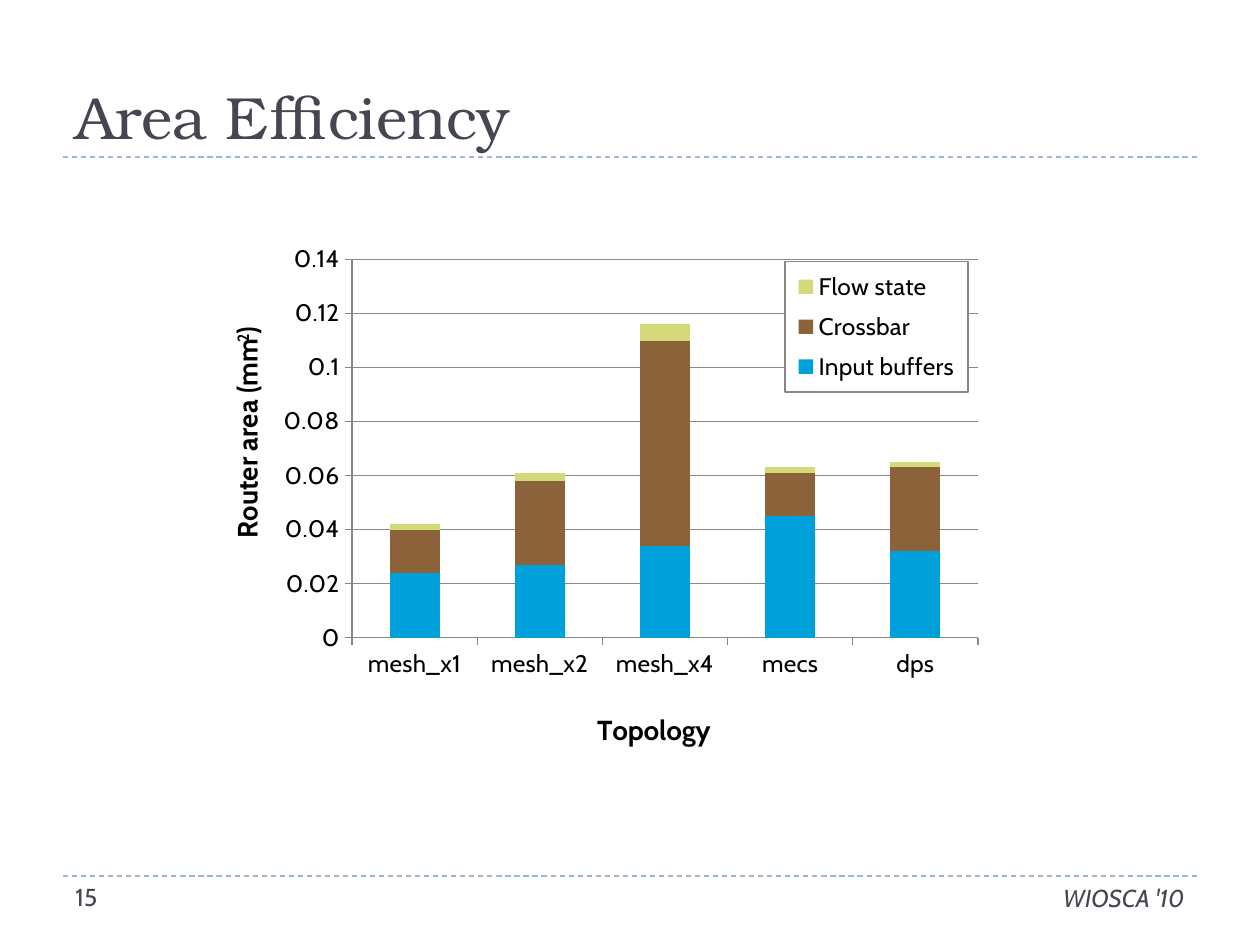
from dataclasses import dataclass

from lxml import etree
from pptx import Presentation
from pptx.chart.data import CategoryChartData
from pptx.dml.color import RGBColor
from pptx.enum.chart import XL_CHART_TYPE as ChartType, XL_LEGEND_POSITION as LegendPosition
from pptx.enum.chart import XL_TICK_MARK as TickMark
from pptx.enum.dml import MSO_LINE as Dash
from pptx.enum.shapes import MSO_CONNECTOR as Connector
from pptx.enum.text import MSO_ANCHOR as Anchor, PP_ALIGN as Align
from pptx.oxml import parse_xml
from pptx.oxml.ns import nsdecls, qn
from pptx.util import Emu, Pt

EMU_PER_PX = 914400 / 126
COLORS = {
    "ink": "464653", "rule": "9FB8CD", "black": "000000", "white": "FFFFFF", "grid": "868686",
    "buffers": "00A1DA", "crossbar": "8B6239", "flow": "D2DA7A",
}
HEADING_FONT, BODY_FONT = "TeX Gyre Bonum", "Cabin"


@dataclass(frozen=True)
class Box:
    left: int
    top: int
    width: int
    height: int

    def emu(self) -> list[Emu]:
        return [px(n) for n in (self.left, self.top, self.width, self.height)]


@dataclass(frozen=True)
class Component:
    name: str
    areas: tuple[float, ...]
    color: str


CHART = Box(200, 241, 798, 514)
PLOT = Box(352, 260, 626, 386)
LEGEND = Box(785, 262, 183, 133)
TOPOLOGY_TITLE = Box(592, 716, 113, 30)
AREA_TITLE = Box(225, 325, 26, 212)
RULES = (157, 876)

TOPOLOGIES = ("mesh_x1", "mesh_x2", "mesh_x4", "mecs", "dps")
COMPONENTS = (
    Component("Input buffers", (0.024, 0.027, 0.034, 0.045, 0.032), "buffers"),
    Component("Crossbar", (0.016, 0.031, 0.076, 0.016, 0.031), "crossbar"),
    Component("Flow state", (0.002, 0.003, 0.006, 0.002, 0.002), "flow"),
)


def px(length: int) -> Emu:
    return Emu(round(length * EMU_PER_PX))


def rgb(color: str) -> RGBColor:
    return RGBColor.from_string(COLORS[color])


def style_font(font, size: float, color="black", face=BODY_FONT, bold=False, italic=False) -> None:
    font.size, font.name = Pt(size), face
    font.bold, font.italic = bold, italic
    font.color.rgb = rgb(color)


def add_text(slide, text: str, box: Box, *, size: float, face=BODY_FONT, italic=False,
             align=Align.LEFT, anchor=Anchor.TOP) -> None:
    frame = slide.shapes.add_textbox(*box.emu()).text_frame
    frame.word_wrap, frame.vertical_anchor = True, anchor
    paragraph = frame.paragraphs[0]
    paragraph.alignment = align
    run = paragraph.add_run()
    run.text = text
    style_font(run.font, size, "ink", face, italic=italic)


def add_rule(slide, y: int) -> None:
    rule = slide.shapes.add_connector(Connector.STRAIGHT, px(63), px(y), px(1197), px(y))
    rule.line.color.rgb, rule.line.width = rgb("rule"), Pt(0.75)
    rule.line.dash_style = Dash.DASH
    etree.SubElement(rule._element.spPr, qn("a:effectLst"))


def place_in_chart(parent, before: str, box: Box, sized=True, inner=False) -> None:
    for old in parent.findall(qn("c:layout")):
        parent.remove(old)
    layout = etree.Element(qn("c:layout"))
    manual = etree.SubElement(layout, qn("c:manualLayout"))
    settings = [("layoutTarget", "inner")] if inner else []
    settings += [("xMode", "edge"), ("yMode", "edge"),
                 ("x", (box.left - CHART.left) / CHART.width),
                 ("y", (box.top - CHART.top) / CHART.height)]
    if sized:
        settings += [("w", box.width / CHART.width), ("h", box.height / CHART.height)]
    for tag, setting in settings:
        etree.SubElement(manual, qn(f"c:{tag}")).set("val", str(setting))
    parent.find(qn(before)).addprevious(layout)


def style_axis(axis, title: str, box: Box, superscript="", rotation=0) -> None:
    style_font(axis.tick_labels.font, 14)
    axis.major_tick_mark, axis.minor_tick_mark = TickMark.OUTSIDE, TickMark.NONE
    axis.format.line.color.rgb = rgb("grid")
    frame = axis.axis_title.text_frame
    frame._txBody.bodyPr.set("rot", str(rotation * 60000))
    pieces = [(title, 0), (superscript, 30000), (")", 0)] if superscript else [(title, 0)]
    for text, baseline in pieces:
        run = frame.paragraphs[0].add_run()
        run.text = text
        style_font(run.font, 16, bold=True)
        if baseline:
            run.font._element.set("baseline", str(baseline))
    place_in_chart(axis.axis_title._element, "c:overlay", box, sized=False)


def add_legend(chart) -> None:
    chart.has_legend = True
    legend = chart.legend
    legend.position, legend.include_in_layout = LegendPosition.RIGHT, False
    style_font(legend.font, 14)
    place_in_chart(legend._element, "c:overlay", LEGEND)
    legend._element.find(qn("c:overlay")).addnext(parse_xml(
        f'<c:spPr {nsdecls("c", "a")}>'
        f'<a:solidFill><a:srgbClr val="{COLORS["white"]}"/></a:solidFill>'
        f'<a:ln w="9525"><a:solidFill><a:srgbClr val="{COLORS["grid"]}"/></a:solidFill></a:ln>'
        '</c:spPr>'))


def add_area_chart(slide) -> None:
    router_areas = CategoryChartData()
    router_areas.categories = TOPOLOGIES
    for component in COMPONENTS:
        router_areas.add_series(component.name, component.areas)
    chart = slide.shapes.add_chart(ChartType.COLUMN_STACKED, *CHART.emu(), router_areas).chart
    style_font(chart.font, 10)
    chart.has_title = False
    bars = chart.plots[0]
    bars.gap_width, bars.overlap, bars.vary_by_categories = 150, 100, False
    for series, component in zip(bars.series, COMPONENTS):
        series.format.fill.solid()
        series.format.fill.fore_color.rgb = rgb(component.color)
    area_axis = chart.value_axis
    area_axis.minimum_scale, area_axis.maximum_scale, area_axis.major_unit = 0, 0.14, 0.02
    area_axis.has_major_gridlines = True
    area_axis.major_gridlines.format.line.color.rgb = rgb("grid")
    style_axis(chart.category_axis, "Topology", TOPOLOGY_TITLE)
    style_axis(area_axis, "Router area (mm", AREA_TITLE, superscript="2", rotation=-90)
    place_in_chart(bars._element.getparent(), "c:barChart", PLOT, inner=True)
    add_legend(chart)


def main() -> None:
    deck = Presentation()
    deck.slide_width, deck.slide_height = px(1260), px(945)
    slide = deck.slides.add_slide(deck.slide_layouts[6])
    for y in RULES:
        add_rule(slide, y)
    add_text(slide, "Area Efficiency", Box(63, 32, 1134, 126), size=34, face=HEADING_FONT,
             anchor=Anchor.BOTTOM)
    add_text(slide, "WIOSCA '10", Box(336, 877, 861, 50), size=14, italic=True, align=Align.RIGHT)
    add_text(slide, "15", Box(63, 876, 262, 50), size=14)
    add_area_chart(slide)
    deck.save("out.pptx")


if __name__ == "__main__":
    main()
